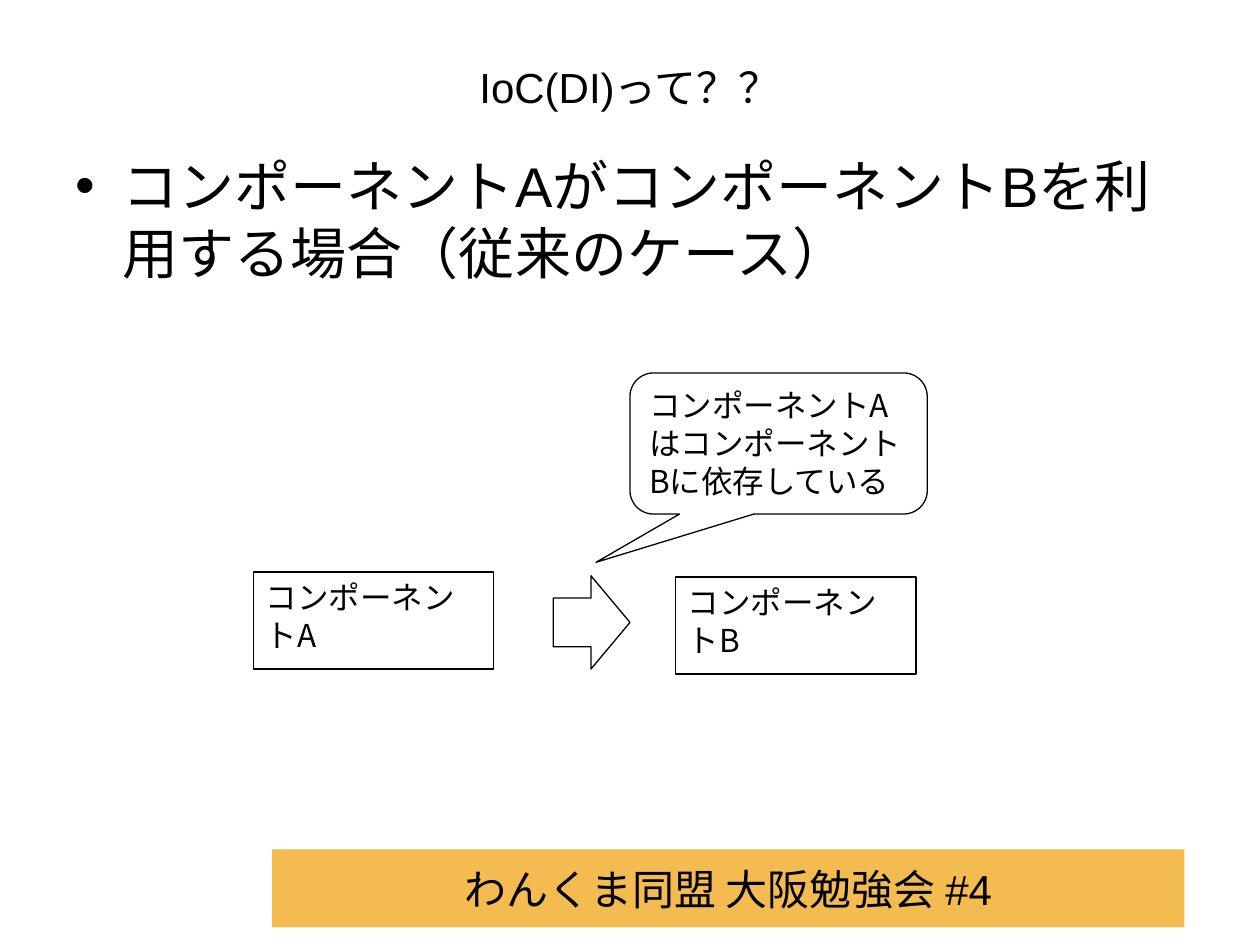
from lxml import etree
from pptx import Presentation
from pptx.dml.color import RGBColor
from pptx.enum.shapes import MSO_SHAPE as SHAPE
from pptx.enum.text import MSO_ANCHOR as ANCHOR, PP_ALIGN as ALIGN
from pptx.oxml.ns import qn
from pptx.util import Inches, Pt

CJK = "Noto Sans CJK JP"


def rgb(value):
    return RGBColor.from_string(value)


def write(sp, text, size, font, align, anchor):
    tf = sp.text_frame
    tf.word_wrap = True
    tf.vertical_anchor = anchor
    p = tf.paragraphs[0]
    p.alignment = align
    p.space_before = Pt(0)
    r = p.add_run()
    r.text = text
    r.font.size = Pt(size)
    r.font.color.rgb = rgb("000000")
    r.font.name = font
    etree.SubElement(r.font._element, qn("a:ea"), typeface=CJK)


prs = Presentation()
prs.slide_width, prs.slide_height = Inches(10), Inches(7.5)
s = prs.slides.add_slide(prs.slide_layouts[1])
title, body = s.placeholders

placeholders = [
    (title, 0.3, 0.77, "IoC(DI)って？？", 24, ALIGN.CENTER, ANCHOR.MIDDLE),
    (body, 1.15, 5.55, "コンポーネントAがコンポーネントBを利用する場合（従来のケース）",
     32, ALIGN.LEFT, ANCHOR.TOP),
]
for sp, top, height, text, size, align, anchor in placeholders:
    sp.left, sp.top, sp.width, sp.height = Inches(0.5), Inches(top), Inches(9), Inches(height)
    write(sp, text, size, "Arial", align, anchor)

footer = s.shapes.add_shape(SHAPE.RECTANGLE, Inches(2.16), Inches(6.74), Inches(7.24), Inches(0.62))
footer.shadow.inherit = False
footer.fill.solid()
footer.fill.fore_color.rgb = rgb("F3BB50")
footer.line.fill.background()
write(footer, "わんくま同盟 大阪勉強会 #4", 24, "Arial", ALIGN.CENTER, ANCHOR.MIDDLE)

diagram = [
    (SHAPE.RIGHT_ARROW, 4.39, 4.57, 0.61, 0.74, [0.523, 0.508], ""),
    (SHAPE.ROUNDED_RECTANGULAR_CALLOUT, 5, 2.96, 2.36, 1.12, [-0.614, 0.842, 0.167],
     "コンポーネントAはコンポーネントBに依存している"),
    (SHAPE.RECTANGLE, 2.01, 4.54, 1.91, 0.77, [], "コンポーネントA"),
    (SHAPE.RECTANGLE, 5.36, 4.58, 1.91, 0.77, [], "コンポーネントB"),
]
for kind, left, top, width, height, adjustments, text in diagram:
    sp = s.shapes.add_shape(kind, Inches(left), Inches(top), Inches(width), Inches(height))
    sp.shadow.inherit = False
    sp.fill.solid()
    sp.fill.fore_color.rgb = rgb("FFFFFF")
    sp.line.color.rgb = rgb("000000")
    sp.line.width = Pt(0.75)
    for i, value in enumerate(adjustments):
        sp.adjustments[i] = value
    if text:
        write(sp, text, 18, CJK, ALIGN.LEFT, ANCHOR.TOP)

prs.save("out.pptx")
